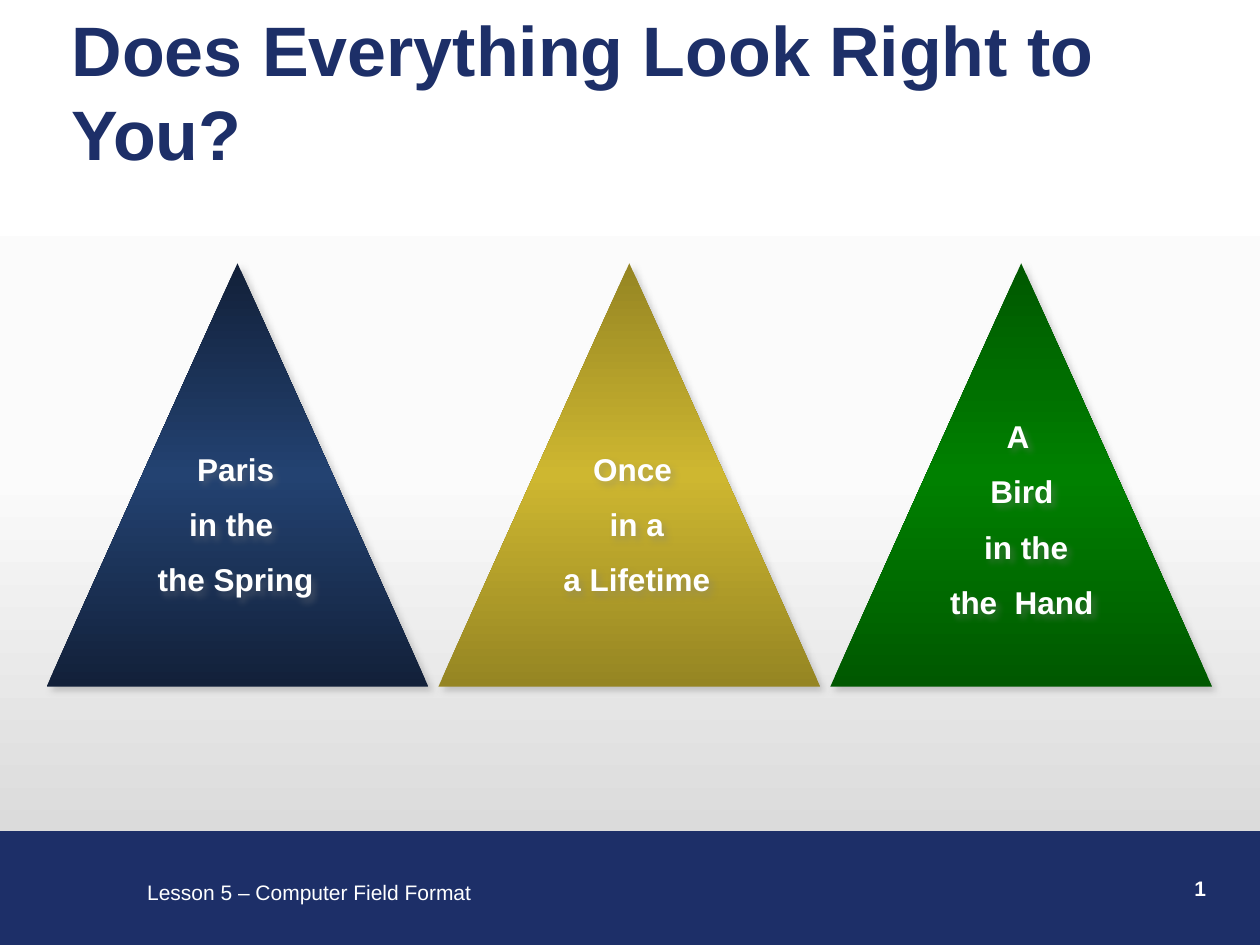
from copy import deepcopy
from pptx import Presentation
from pptx.dml.color import RGBColor
from pptx.enum.shapes import MSO_SHAPE as Kind
from pptx.enum.text import MSO_ANCHOR as Anchor, PP_ALIGN as Align
from pptx.oxml import parse_xml
from pptx.oxml.ns import nsdecls, qn
from pptx.util import Inches, Pt

NAVY, WHITE = "1D2F68", "FFFFFF"
CONES = [
    ("122039", "234271", 0.89, 3.52, 1.96, 1.31,
     ["Paris", "in the ", "the Spring"]),
    ("958523", "CEB730", 4.05, 3.52, 1.94, 1.31,
     ["Once", " in a", " a Lifetime"]),
    ("005800", "008000", 7.11, 3.26, 2, 1.77,
     ["A ", "Bird", " in the", "the  Hand"]),
]


def color(code):
    """Turn a hex string into a colour."""
    return RGBColor.from_string(code)


def place(shape, *box):
    """Set left, top, width and height in inches."""
    shape.left, shape.top, shape.width, shape.height = map(Inches, box)


def blend(fill, root, codes):
    """Fill from top to bottom with three evenly spaced colours."""
    fill.gradient()
    fill.gradient_angle = 270
    stops = root.find(".//" + qn("a:gsLst"))
    stops.append(deepcopy(stops[-1]))
    for i, (stop, code) in enumerate(zip(fill.gradient_stops, codes)):
        stop.position = i / 2
        stop.color.rgb = color(code)


def shade(shape):
    """Add a soft grey shadow to the lower right."""
    shape.element.spPr.append(parse_xml(
        f'<a:effectLst {nsdecls("a")}><a:outerShdw blurRad="{Pt(4)}" '
        f'dist="{Pt(3)}" dir="2700000" algn="ctr" rotWithShape="0">'
        '<a:srgbClr val="808080"><a:alpha val="40000"/></a:srgbClr>'
        '</a:outerShdw></a:effectLst>'))


def style(frame, size, code, bold=False, align=Align.LEFT):
    """Format every paragraph and run of a text frame."""
    for par in frame.paragraphs:
        par.alignment = align
        for run in par.runs:
            font = run.font
            font.name, font.size, font.bold = "Arial", Pt(size), bold
            font.color.rgb = color(code)


def add_text(slide, box, text, size, bold=False, align=Align.LEFT, wrap=True):
    """Add a white text box."""
    shape = slide.shapes.add_textbox(*map(Inches, box))
    frame = shape.text_frame
    frame.text, frame.word_wrap = text, wrap
    style(frame, size, WHITE, bold, align)
    return shape


def add_band(slide):
    """Add the footer band."""
    band = slide.shapes.add_shape(
        Kind.RECTANGLE, *map(Inches, (-0.02, 6.6, 10.02, 0.9)))
    band.shadow.inherit = False
    band.fill.solid()
    band.fill.fore_color.rgb = color(NAVY)
    band.line.color.rgb = color(NAVY)
    band.line.width = Pt(0.75)


def add_number(slide):
    """Add the slide number as a field."""
    shape = add_text(slide, (7.59, 6.9, 2.08, 0.5), "1", 12, True, Align.RIGHT)
    run = shape.element.find(".//" + qn("a:r"))
    field = parse_xml(
        f'<a:fld {nsdecls("a")} type="slidenum" '
        'id="{B6F15528-21DE-4FAA-801E-634DDDAF4B2B}"/>')
    run.addprevious(field)
    field.extend(list(run))
    run.getparent().remove(run)


def add_cone(slide, left, edge, core):
    """Add a shaded triangle."""
    cone = slide.shapes.add_shape(
        Kind.ISOSCELES_TRIANGLE, *map(Inches, (left, 2.09, 3.03, 3.36)))
    blend(cone.fill, cone.element, (edge, core, edge))
    cone.line.fill.background()
    shade(cone)


def add_phrase(slide, box, lines):
    """Add the centred words of a triangle."""
    shape = add_text(slide, box, "\n".join(lines), 18, True, Align.CENTER)
    for par in shape.text_frame.paragraphs[1:]:
        par.space_before = Pt(10)
    shape.fill.background()
    shade(shape)


def set_title(slide, text):
    """Move and format the title."""
    title = slide.shapes.title
    place(title, 0.47, 0.38, 9.27, 0.67)
    frame = title.text_frame
    frame.text, frame.word_wrap = text, True
    frame.vertical_anchor = Anchor.MIDDLE
    style(frame, 40, NAVY, True)


def main():
    """Build the slide."""
    deck = Presentation()
    deck.slide_width, deck.slide_height = Inches(10), Inches(7.5)
    slide = deck.slides.add_slide(deck.slide_layouts[5])
    blend(slide.background.fill, slide.element, (WHITE, "FBFBFB", "D0D0D0"))
    add_band(slide)
    add_text(slide, (1.07, 6.93, 2.8, 0.3),
             "Lesson 5 – Computer Field Format", 12, wrap=False)
    add_number(slide)
    for i, (edge, core, *box, lines) in enumerate(CONES):
        add_cone(slide, 0.37 + 3.11 * i, edge, core)
        add_phrase(slide, box, lines)
    set_title(slide, "Does Everything Look Right to You?")
    deck.save("out.pptx")


if __name__ == "__main__":
    main()
